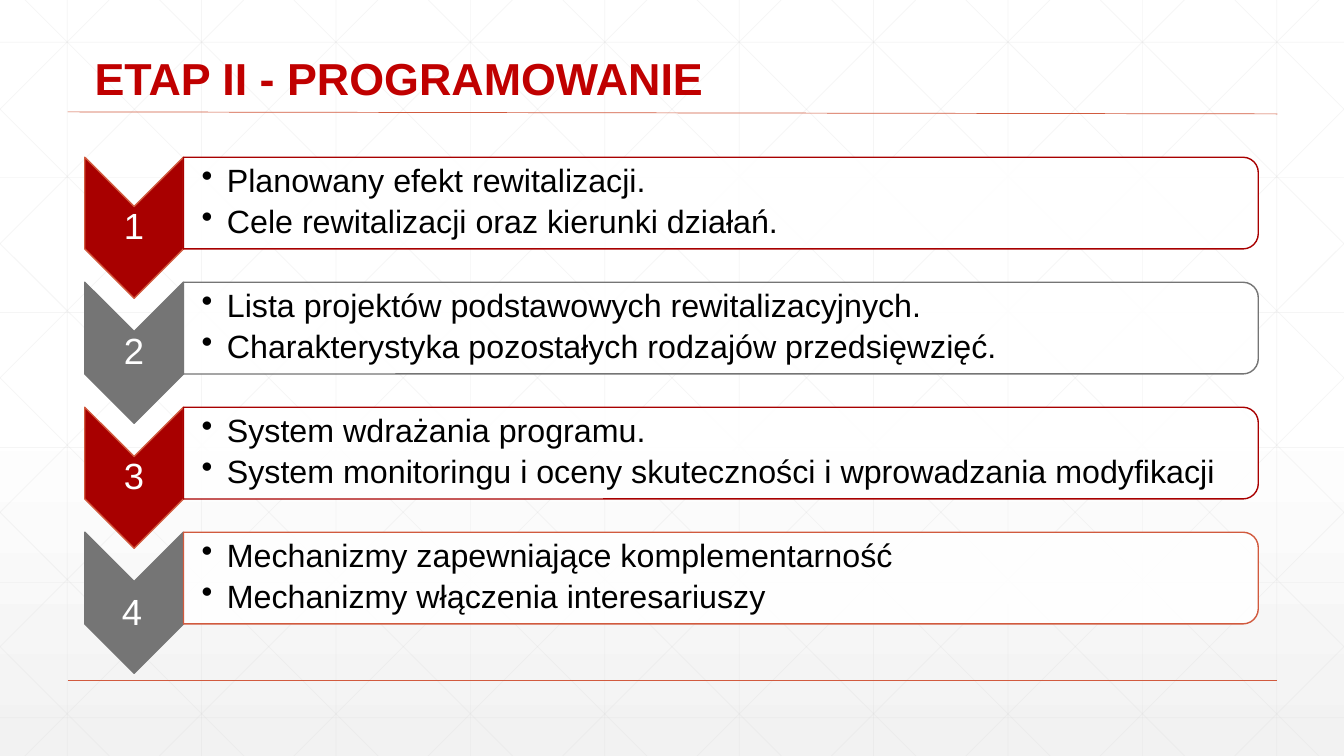
from copy import deepcopy

from pptx import Presentation
from pptx.dml.color import RGBColor
from pptx.enum.shapes import MSO_CONNECTOR, MSO_SHAPE
from pptx.enum.text import MSO_ANCHOR, PP_ALIGN
from pptx.oxml.ns import qn
from pptx.oxml.xmlchemy import OxmlElement
from pptx.util import Inches, Pt

CHEVRON = MSO_SHAPE.CHEVRON
ROUNDED_END = MSO_SHAPE.ROUND_2_SAME_RECTANGLE
STRAIGHT = MSO_CONNECTOR.STRAIGHT
MIDDLE, BOTTOM = MSO_ANCHOR.MIDDLE, MSO_ANCHOR.BOTTOM
LEFT, CENTER = PP_ALIGN.LEFT, PP_ALIGN.CENTER

WHITE = RGBColor(0xFF, 0xFF, 0xFF)
BLACK = RGBColor(0x00, 0x00, 0x00)
PALE = RGBColor(0xF2, 0xF2, 0xF2)
GRID = RGBColor(0xD9, 0xD9, 0xD9)
ORANGE = RGBColor(0xD1, 0x5A, 0x3E)
TITLE_RED = RGBColor(0xC0, 0x00, 0x00)
RED = RGBColor(0xA8, 0x00, 0x00)
GRAY = RGBColor(0x75, 0x75, 0x75)

WIDTH, HEIGHT = 13.33, 7.5
FONT = "Arial"
STAGE_PITCH = 1.24
CHEVRON_WIDTH, CHEVRON_HEIGHT = 0.98, 1.4
PANEL_HEIGHT = 0.91

# fill, chevron outline, panel outline, number shift (x, y), points
STAGES = [
    (RED, ORANGE, RED, (0, 0),
     ["Planowany efekt rewitalizacji.",
      "Cele rewitalizacji oraz kierunki działań."]),
    (GRAY, GRAY, GRAY, (0, 0),
     ["Lista projektów podstawowych rewitalizacyjnych.",
      "Charakterystyka pozostałych rodzajów przedsięwzięć."]),
    (RED, ORANGE, RED, (0, 0),
     ["System wdrażania programu.",
      "System monitoringu i oceny skuteczności i wprowadzania modyfikacji"]),
    (GRAY, GRAY, ORANGE, (-0.02, 0.11),
     ["Mechanizmy zapewniające komplementarność",
      "Mechanizmy włączenia interesariuszy"]),
]


def set_alpha(holder, percent):
    """Make the solid colour inside an XML element partly transparent."""
    alpha = OxmlElement("a:alpha")
    alpha.set("val", str(percent * 1000))
    holder.find(".//" + qn("a:srgbClr")).append(alpha)


def add_line(slide, start, end, color, weight, alpha=100):
    """Draw a straight line between two points."""
    points = [Inches(value) for value in (*start, *end)]
    line = slide.shapes.add_connector(STRAIGHT, *points)
    line.line.color.rgb = color
    line.line.width = Pt(weight)
    properties = line._element.spPr
    if alpha < 100:
        set_alpha(properties, alpha)
    properties.append(OxmlElement("a:effectLst"))


def add_text(slide, box, texts, size, color, align=LEFT, anchor=MIDDLE,
             insets=(0.02, 0.02), bold=False, bulleted=False):
    """Write one paragraph per text in a box, optionally bulleted."""
    frame = slide.shapes.add_textbox(*map(Inches, box)).text_frame
    frame.word_wrap = True
    frame.vertical_anchor = anchor
    frame.margin_left, frame.margin_right = map(Inches, insets)
    frame.margin_top = frame.margin_bottom = Inches(0.02)
    for index, text in enumerate(texts):
        paragraph = frame.paragraphs[0] if index == 0 else frame.add_paragraph()
        paragraph.alignment = align
        paragraph.line_spacing = 0.9
        if bulleted:
            paragraph.space_after = Pt(4.5)
            properties = paragraph._p.get_or_add_pPr()
            properties.set("marL", str(Inches(0.25)))
            properties.set("indent", str(-Inches(0.25)))
            bullet = OxmlElement("a:buChar")
            bullet.set("char", "•")
            properties.append(bullet)
        run = paragraph.add_run()
        run.text = text
        run.font.name = FONT
        run.font.size = Pt(size)
        run.font.bold = bold
        run.font.color.rgb = color


def add_turned_shape(slide, kind, box, fill, outline):
    """Place a preset shape turned by 90 degrees so that it fills the box."""
    left, top, width, height = box
    shape = slide.shapes.add_shape(
        kind, Inches(left + (width - height) / 2),
        Inches(top + (height - width) / 2), Inches(height), Inches(width))
    shape.rotation = 90
    shape.shadow.inherit = False
    shape.fill.solid()
    shape.fill.fore_color.rgb = fill
    shape.line.color.rgb = outline
    shape.line.width = Pt(1)
    return shape


def add_background(slide):
    """Fill the slide with a vertical gradient and a faint triangular grid."""
    fill = slide.background.fill
    fill.gradient()
    fill.gradient_angle = 270
    stop_list = slide.element.find(".//" + qn("a:gsLst"))
    stop_list.insert(1, deepcopy(stop_list[0]))
    stops = zip(fill.gradient_stops, (0, 0.53, 1), (WHITE, WHITE, PALE))
    for stop, position, color in stops:
        stop.position = position
        stop.color.rgb = color

    step = WIDTH / 10
    lines = [((step * (i + 0.5), 0), (step * (i + 0.5), HEIGHT)) for i in range(10)]
    lines += [((0, 0.42 + 1.34 * i), (WIDTH, 0.42 + 1.34 * i)) for i in range(6)]
    for i in range(-5, 10):
        foot = 0.25 + step * i
        x1, x2 = max(foot, 0), min(foot + HEIGHT, WIDTH)
        y1, y2 = x1 - foot, x2 - foot
        lines.append(((x1, y1), (x2, y2)))
        lines.append(((WIDTH - x1, y1), (WIDTH - x2, y2)))
    for start, end in lines:
        add_line(slide, start, end, GRID, 0.5, alpha=25)


def add_heading(slide, left, top, width, height):
    """Write the slide title and the rules that frame the content."""
    add_line(slide, (0.67, 6.75), (12.67, 6.75), ORANGE, 1)
    add_line(slide, (0.67, 1.11), (12.67, 1.13), ORANGE, 0.5)
    add_text(slide, (left, top, width, height), ["ETAP II - PROGRAMOWANIE"],
             32, TITLE_RED, anchor=BOTTOM, insets=(0.1, 0.1), bold=True)


def add_stage(slide, left, top, width, number, stage):
    """Draw a numbered chevron and the panel with its points."""
    fill, chevron_outline, panel_outline, (shift_x, shift_y), points = stage
    add_turned_shape(slide, CHEVRON, (left, top, CHEVRON_WIDTH, CHEVRON_HEIGHT),
                     fill, chevron_outline)
    panel_left = left + CHEVRON_WIDTH
    panel_width = width - CHEVRON_WIDTH
    panel = add_turned_shape(slide, ROUNDED_END,
                             (panel_left, top, panel_width, PANEL_HEIGHT),
                             WHITE, panel_outline)
    set_alpha(panel._element.spPr.find(qn("a:solidFill")), 90)
    add_text(slide, (left + shift_x, top + 0.49 + shift_y, CHEVRON_WIDTH, 0.42),
             [str(number)], 26, WHITE, align=CENTER)
    add_text(slide, (panel_left, top + 0.04, panel_width - 0.05, 0.82),
             points, 23, BLACK, insets=(0.18, 0.02), bulleted=True)


def main():
    """Build the programming stage slide and save it."""
    deck = Presentation()
    deck.slide_width, deck.slide_height = Inches(WIDTH), Inches(HEIGHT)
    slide = deck.slides.add_slide(deck.slide_layouts[6])
    add_background(slide)
    add_heading(slide, 0.84, 0.3, 10.5, 0.76)
    for index, stage in enumerate(STAGES):
        add_stage(slide, 0.84, 1.56 + STAGE_PITCH * index, 11.64, index + 1, stage)
    deck.save("out.pptx")


if __name__ == "__main__":
    main()
